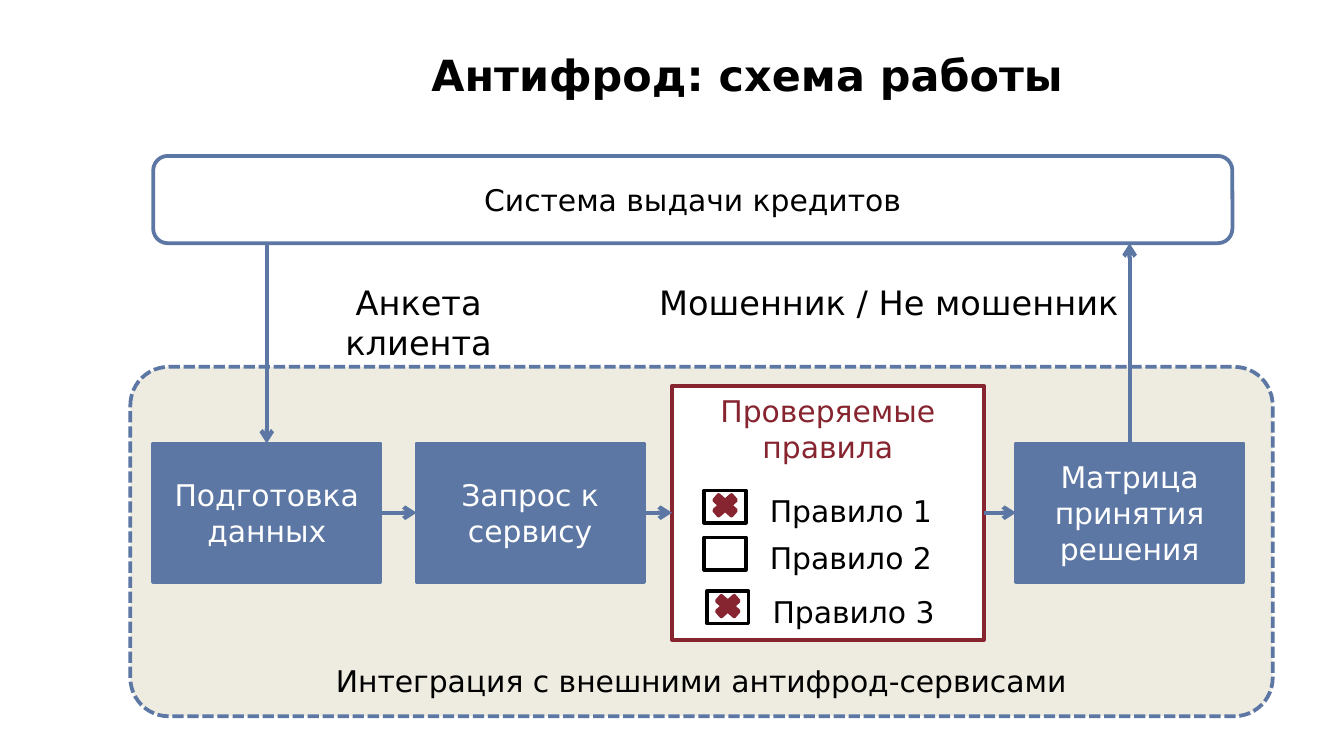
"""Builds the slide that shows how the antifraud check works."""
from dataclasses import dataclass

from lxml import etree
from pptx import Presentation, util as u
from pptx.dml.color import RGBColor
from pptx.enum import dml, shapes, text
from pptx.oxml.ns import qn


@dataclass(frozen=True)
class Theme:
    font: str = "DejaVu Sans"
    black: str = "000000"
    white: str = "FFFFFF"
    blue: str = "5C77A4"
    red: str = "862430"
    sand: str = "EEECE1"
    title: int = 23
    label: int = 18
    body: int = 16
    outline: float = 2
    arrow: float = 2.25


@dataclass(frozen=True)
class Area:
    left: float
    top: float
    width: float
    height: float

    def lengths(self) -> list:
        return [u.Inches(v) for v in (self.left, self.top, self.width, self.height)]


@dataclass(frozen=True)
class Block:
    area: Area
    fill: str
    line: str
    caption: str = ""
    color: str = "000000"
    kind: shapes.MSO_SHAPE = shapes.MSO_SHAPE.RECTANGLE
    anchor: text.MSO_ANCHOR = text.MSO_ANCHOR.MIDDLE


@dataclass(frozen=True)
class Rule:
    caption: str
    left: float
    top: float
    failed: bool


THEME = Theme()
TOP, LEFT, BOTTOM, RIGHT = range(4)
STEP_TOP, STEP_WIDTH, STEP_HEIGHT = 3.3, 1.69, 1.03
SYSTEM = Area(1.14, 1.16, 8.03, 0.65)

RULES = [
    Rule("Правило 1", 5.24, 3.65, True),
    Rule("Правило 2", 5.24, 4.0, False),
    Rule("Правило 3", 5.26, 4.4, True),
]


def write(frame, caption: str, size: int, color: str, align, bold: bool = False) -> None:
    para = frame.paragraphs[0]
    para.alignment = align
    span = para.add_run()
    span.text = caption
    span.font.name = THEME.font
    span.font.size = u.Pt(size)
    span.font.bold = bold
    span.font.color.rgb = RGBColor.from_string(color)


def add_block(parent, block: Block):
    box = parent.add_shape(block.kind, *block.area.lengths())
    box.shadow.inherit = False
    box.fill.solid()
    box.fill.fore_color.rgb = RGBColor.from_string(block.fill)
    box.line.color.rgb = RGBColor.from_string(block.line)
    box.line.width = u.Pt(THEME.outline)
    if block.caption:
        box.text_frame.word_wrap = True
        box.text_frame.vertical_anchor = block.anchor
        write(box.text_frame, block.caption, THEME.body, block.color, text.PP_ALIGN.CENTER)
    return box


def add_label(parent, area: Area, caption: str, size: int, align, wrap: bool = False) -> None:
    box = parent.add_textbox(*area.lengths())
    box.text_frame.word_wrap = wrap
    write(box.text_frame, caption, size, THEME.black, align)


def add_step(parent, left: float, caption: str):
    area = Area(left, STEP_TOP, STEP_WIDTH, STEP_HEIGHT)
    return add_block(parent, Block(area, THEME.blue, THEME.blue, caption, THEME.white))


def add_rule(parent, rule: Rule) -> None:
    group = parent.add_group_shape().shapes
    add_block(group, Block(Area(rule.left, rule.top, 0.31, 0.24), THEME.white, THEME.black))
    add_label(group, Area(rule.left + 0.39, rule.top - 0.03, 1.42, 0.37),
              rule.caption, THEME.body, text.PP_ALIGN.LEFT)
    if rule.failed:
        add_block(parent, Block(Area(rule.left + 0.03, rule.top, 0.25, 0.22), THEME.red,
                                THEME.red, kind=shapes.MSO_SHAPE.MATH_MULTIPLY))


def add_arrow(parent, x: int = 0, y: int = 0, start=None, end=None) -> None:
    """Draws an arrow; an end that is not joined to a box stays at x, y."""
    arrow = parent.add_connector(shapes.MSO_CONNECTOR.STRAIGHT, x, y, x, y)
    if start:
        arrow.begin_connect(*start)
    if end:
        arrow.end_connect(*end)
    arrow.line.color.rgb = RGBColor.from_string(THEME.blue)
    arrow.line.width = u.Pt(THEME.arrow)
    properties = arrow._element.spPr
    etree.SubElement(properties.find(qn("a:ln")), qn("a:tailEnd"), type="arrow")
    etree.SubElement(properties, qn("a:effectLst"))


def main() -> None:
    deck = Presentation()
    deck.slide_width = u.Inches(10)
    deck.slide_height = deck.slide_width * 9 // 16
    page = deck.slides.add_slide(deck.slide_layouts[5])
    canvas = page.shapes

    title = canvas.title
    title.left, title.top, title.width, title.height = Area(3.11, 0.29, 6.64, 0.53).lengths()
    title.text_frame.vertical_anchor = text.MSO_ANCHOR.MIDDLE
    write(title.text_frame, "Антифрод: схема работы", THEME.title, THEME.black,
          text.PP_ALIGN.LEFT, bold=True)

    rounded = shapes.MSO_SHAPE.ROUNDED_RECTANGLE
    zone = add_block(canvas, Block(
        Area(0.97, 2.73, 8.5, 2.6), THEME.sand, THEME.blue,
        "Интеграция с внешними антифрод-сервисами", kind=rounded,
        anchor=text.MSO_ANCHOR.BOTTOM))
    zone.adjustments[0] = 0.11
    zone.line.dash_style = dml.MSO_LINE.SQUARE_DOT
    add_block(canvas, Block(SYSTEM, THEME.white, THEME.blue, "Система выдачи кредитов",
                            kind=rounded))

    prepare = add_step(canvas, 1.14, "Подготовка данных")
    request = add_step(canvas, 3.1, "Запрос к сервису")
    checks = add_block(canvas, Block(Area(5, 2.87, 2.32, 1.89), THEME.white, THEME.red,
                                     "Проверяемые правила", THEME.red,
                                     anchor=text.MSO_ANCHOR.TOP))
    matrix = add_step(canvas, 7.56, "Матрица принятия решения")

    chain = [prepare, request, checks, matrix]
    for source, target in zip(chain, chain[1:]):
        add_arrow(canvas, start=(source, RIGHT), end=(target, LEFT))
    system_bottom = u.Inches(SYSTEM.top + SYSTEM.height)
    add_arrow(canvas, prepare.left + prepare.width // 2, system_bottom, end=(prepare, TOP))
    add_arrow(canvas, matrix.left + matrix.width // 2, system_bottom, start=(matrix, TOP))

    for rule in RULES:
        add_rule(canvas, rule)
    add_label(canvas, Area(1.99, 2.05, 2.25, 0.4), "Анкета клиента", THEME.label,
              text.PP_ALIGN.CENTER, wrap=True)
    add_label(canvas, Area(4.8, 2.05, 3.63, 0.4), "Мошенник / Не мошенник", THEME.label,
              text.PP_ALIGN.CENTER)

    deck.save("out.pptx")


if __name__ == "__main__":
    main()
